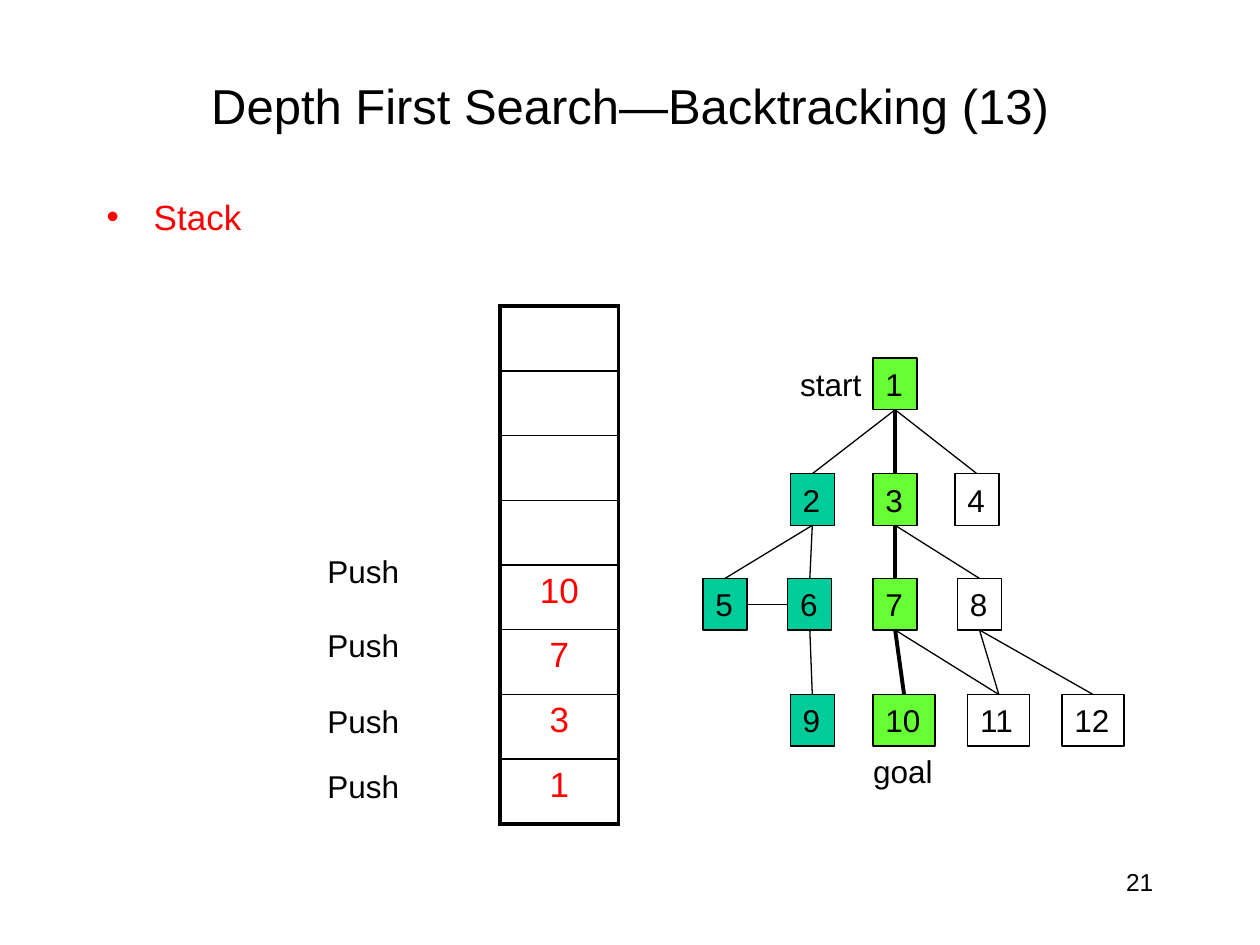
import pptx
import pptx.util
import pptx.dml.color
import pptx.enum.shapes
import pptx.enum.text
import pptx.oxml.ns
from lxml import etree

Cm, Pt = pptx.util.Cm, pptx.util.Pt
ALIGN = pptx.enum.text.PP_ALIGN
ANCHOR = pptx.enum.text.MSO_ANCHOR
qn = pptx.oxml.ns.qn

COLORS = {"text": "000000", "accent": "FF0000", "path": "66FF33", "visited": "00CC99"}
FONT = "Arial"

TITLE = "Depth First Search—Backtracking (13)"
STACK = ["", "", "", "", "10", "7", "3", "1"]
PUSH_TOPS = [11.0, 12.5, 14.02, 15.34]

# One entry per tree level: top, then (node, left, state)
LEVELS = [
    (7.22, [("1", 17.6, "path")]),
    (9.55, [("2", 15.93, "visited"), ("3", 17.6, "path"), ("4", 19.25, None)]),
    (11.66, [("5", 14.17, "visited"), ("6", 15.88, "visited"), ("7", 17.6, "path"),
             ("8", 19.3, None)]),
    (14.0, [("9", 15.93, "visited"), ("10", 17.6, "path"), ("11", 19.51, None),
            ("12", 21.41, None)]),
]
NODE_HEIGHT = 1.04
NODE_WIDTHS = {1: 0.89, 2: 1.25}  # by number of digits

TREE_EDGES = [("1", "2"), ("1", "3"), ("1", "4"), ("2", "5"), ("2", "6"), ("3", "7"),
              ("3", "8"), ("6", "9"), ("7", "10"), ("7", "11"), ("8", "11"), ("8", "12")]
PATH_EDGES = [("1", "3"), ("3", "7"), ("7", "10")]
TOP, LEFT, BOTTOM, RIGHT = range(4)


def rgb(name):
    return pptx.dml.color.RGBColor.from_string(COLORS[name])


def write(tf, text, size, color="text", align=ALIGN.LEFT):
    p = tf.paragraphs[0]
    p.alignment = align
    r = p.add_run()
    r.text = text
    r.font.name = FONT
    r.font.size = Pt(size)
    r.font.color.rgb = rgb(color)
    return p


def add_text(slide, box, text, size, color="text", align=ALIGN.LEFT, wrap=False):
    tf = slide.shapes.add_textbox(*map(Cm, box)).text_frame
    tf.word_wrap = wrap
    return write(tf, text, size, color, align)


def add_bullet(p, indent):
    pPr = p._p.get_or_add_pPr()
    pPr.set("marL", str(indent))
    pPr.set("indent", str(-indent))
    etree.SubElement(pPr, qn("a:buFont"), typeface=FONT)
    etree.SubElement(pPr, qn("a:buChar"), char="•")


def add_node(slide, label, left, top, state):
    sp = slide.shapes.add_shape(pptx.enum.shapes.MSO_SHAPE.RECTANGLE, Cm(left), Cm(top),
                                Cm(NODE_WIDTHS[len(label)]), Cm(NODE_HEIGHT))
    sp.shadow.inherit = False
    if state:
        sp.fill.solid()
        sp.fill.fore_color.rgb = rgb(state)
    else:
        sp.fill.background()
    sp.line.color.rgb = rgb("text")
    sp.line.width = Pt(0.75)
    sp.text_frame.word_wrap = False
    write(sp.text_frame, label, 18)
    return sp


def add_edge(slide, start, start_side, end, end_side, width):
    line = slide.shapes.add_connector(pptx.enum.shapes.MSO_CONNECTOR.STRAIGHT, 0, 0, 0, 0)
    line.begin_connect(start, start_side)
    line.end_connect(end, end_side)
    line.line.color.rgb = rgb("text")
    line.line.width = Pt(width)
    etree.SubElement(line._element.spPr, qn("a:effectLst"))


def set_borders(cell, widths):
    """Draw the cell's borders; widths maps L, R, T and B to points."""
    tcPr = cell._tc.get_or_add_tcPr()
    for i, (side, width) in enumerate(widths.items()):
        ln = etree.Element(qn("a:ln" + side), w=str(Pt(width)))
        fill = etree.SubElement(ln, qn("a:solidFill"))
        etree.SubElement(fill, qn("a:srgbClr"), val=COLORS["text"])
        tcPr.insert(i, ln)


def add_stack(slide, left, top, width, height):
    table = slide.shapes.add_table(len(STACK), 1, Cm(left), Cm(top),
                                   Cm(width), Cm(height)).table
    table.first_row = table.horz_banding = False
    last = len(STACK) - 1
    for i, value in enumerate(STACK):
        cell = table.cell(i, 0)
        cell.fill.background()
        set_borders(cell, {"L": 2.25, "R": 2.25, "T": 2.25 if i == 0 else 1,
                           "B": 2.25 if i == last else 1})
        if value:
            write(cell.text_frame, value, 20, "accent", ALIGN.CENTER)


def main():
    prs = pptx.Presentation()
    prs.slide_width, prs.slide_height = Cm(25.4), Cm(19.05)
    slide = prs.slides.add_slide(prs.slide_layouts[5])

    title = slide.shapes.title
    title.left, title.top, title.width, title.height = map(Cm, (1.9, 1.06, 21.6, 2.12))
    title.text_frame.vertical_anchor = ANCHOR.MIDDLE
    write(title.text_frame, TITLE, 28, align=ALIGN.CENTER)

    add_bullet(add_text(slide, (1.9, 3.81, 10.6, 1.2), "Stack", 20, "accent", wrap=True),
               Cm(0.95))
    add_text(slide, (18.2, 17.35, 5.3, 1.27), "21", 14, align=ALIGN.RIGHT, wrap=True)

    nodes = {}
    for top, level in LEVELS:
        for label, left, state in level:
            nodes[label] = add_node(slide, label, left, top, state)
    for edge in TREE_EDGES:
        parent, child = (nodes[n] for n in edge)
        add_edge(slide, parent, BOTTOM, child, TOP, 2.25 if edge in PATH_EDGES else 0.75)
    add_edge(slide, nodes["5"], RIGHT, nodes["6"], LEFT, 0.75)

    add_text(slide, (15.88, 7.24, 1.75, 1.02), "start", 18)
    add_text(slide, (17.35, 15.04, 1.7, 1.02), "goal", 18)
    add_stack(slide, 10.08, 6.17, 2.39, 10.44)
    for top in PUSH_TOPS:
        add_text(slide, (6.35, top, 1.96, 1.02), "Push", 18)

    prs.save("out.pptx")


if __name__ == "__main__":
    main()
